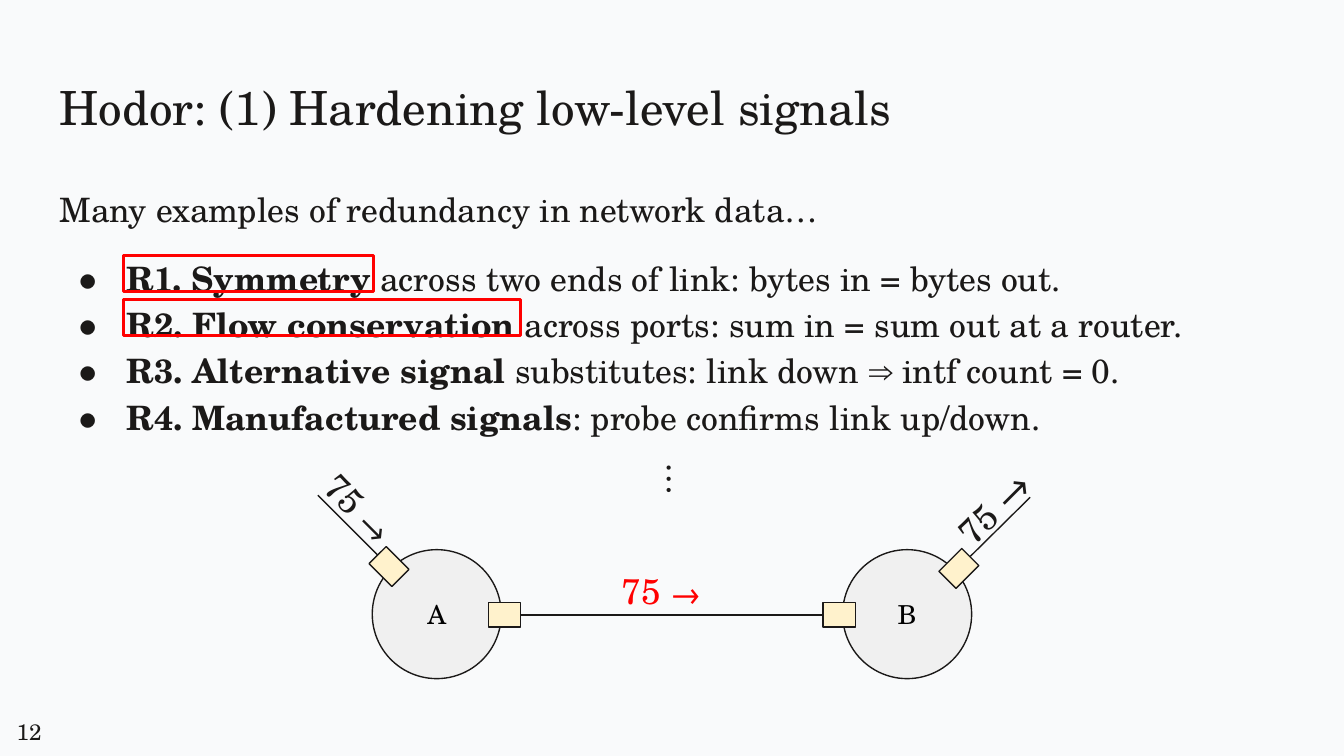
from dataclasses import dataclass

import pptx
import pptx.dml.color
import pptx.enum.shapes
import pptx.enum.text
import pptx.oxml.ns
import pptx.util
from lxml import etree

SCALE = 4572
Kind = pptx.enum.shapes.MSO_SHAPE
Align = pptx.enum.text.PP_ALIGN
Anchor = pptx.enum.text.MSO_ANCHOR


@dataclass(frozen=True)
class Theme:
    font: str = "TeX Gyre Schola"
    back: str = "F9FAFB"
    ink: str = "1B1918"
    black: str = "000000"
    red: str = "FF0000"
    node: str = "F0F0F0"
    port: str = "FFF2CC"
    title: float = 25.2
    body: float = 18
    flow: float = 19
    arrow: float = 16
    name: float = 14
    page: float = 12
    thin: float = 0.75
    thick: float = 1.5


@dataclass(frozen=True)
class Box:
    left: int
    top: int
    wide: int
    high: int
    turn: int = 0


@dataclass(frozen=True)
class Bit:
    text: str
    size: float
    color: str
    bold: bool = False


@dataclass(frozen=True)
class Label:
    box: Box
    bits: tuple[Bit, ...]
    align: Align = Align.LEFT
    space: float = 1.0


@dataclass(frozen=True)
class Point:
    lead: str
    rest: str


@dataclass(frozen=True)
class Node:
    name: str
    box: Box


@dataclass(frozen=True)
class Link:
    left: int
    top: int
    right: int
    low: int


THEME = Theme()

POINTS = (
    Point("R1. Symmetry", " across two ends of link: bytes in = bytes out."),
    Point("R2. Flow conservation", " across ports: sum in = sum out at a router."),
    Point("R3. Alternative signal", " substitutes: link down ⇒ intf count = 0."),
    Point("R4. Manufactured signals", ": probe confirms link up/down."),
)
NODES = (Node("A", Box(554, 818, 192, 192)), Node("B", Box(1254, 818, 192, 192)))
PORTS = (
    Box(727, 897, 48, 36),
    Box(1225, 897, 48, 36),
    Box(555, 825, 48, 36, 225),
    Box(1403, 828, 48, 36, 315),
)
LINKS = (
    Link(775, 915, 1225, 915),
    Link(473, 737, 562, 826),
    Link(1533, 740, 1444, 828),
)
FRAMES = (Box(184, 380, 372, 54), Box(184, 446, 591, 54))
LABELS = (
    Label(Box(69, 97, 1864, 126),
          (Bit("Hodor: (1) Hardening low-level signals", THEME.title, THEME.ink),)),
    Label(Box(920, 651, 160, 126, 90),
          (Bit("…", THEME.body, THEME.ink),), Align.CENTER),
    Label(Box(888, 818, 192, 104),
          (Bit("75 ", THEME.flow, THEME.red), Bit("→", THEME.arrow, THEME.red)),
          Align.CENTER, 1.15),
    Label(Box(360, 654, 278, 104, 45),
          (Bit("75 ", THEME.flow, THEME.ink), Bit("→", THEME.arrow, THEME.ink)),
          Align.RIGHT, 1.15),
    Label(Box(1369, 648, 304, 104, 315),
          (Bit("75 →", THEME.flow, THEME.ink),), Align.LEFT, 1.15),
    Label(Box(5, 1049, 102, 70), (Bit("12", THEME.page, THEME.ink),)),
)


def px(size: int) -> int:
    return size * SCALE


def rgb(color: str) -> pptx.dml.color.RGBColor:
    return pptx.dml.color.RGBColor.from_string(color)


def sub(root, tag: str, **attrs: str):
    return etree.SubElement(root, pptx.oxml.ns.qn(tag), attrs)


def place(box: Box) -> tuple[int, ...]:
    return px(box.left), px(box.top), px(box.wide), px(box.high)


def write(para, bits: tuple[Bit, ...]) -> None:
    para.text = bits[0].text
    for bit in bits[1:]:
        para.add_run().text = bit.text
    for run, bit in zip(para.runs, bits):
        font = run.font
        font.name = THEME.font
        font.size = pptx.util.Pt(bit.size)
        font.bold = bit.bold
        font.color.rgb = rgb(bit.color)
        for tag in ("a:ea", "a:cs"):
            sub(run._r.get_or_add_rPr(), tag, typeface=THEME.font)


def pad(frame) -> None:
    frame.word_wrap = True
    frame.margin_left = frame.margin_right = px(20)
    frame.margin_top = frame.margin_bottom = px(20)


def add_text(slide, box: Box):
    shape = slide.shapes.add_textbox(*place(box))
    shape.rotation = box.turn
    pad(shape.text_frame)
    return shape.text_frame


def add_label(slide, label: Label) -> None:
    para = add_text(slide, label.box).paragraphs[0]
    write(para, label.bits)
    para.alignment = label.align
    para.line_spacing = label.space


def add_list(slide, box: Box, intro: str, points: tuple[Point, ...]) -> None:
    frame = add_text(slide, box)
    frame.text = "\n".join([intro] + [point.lead for point in points])
    first, *rest = frame.paragraphs
    first.line_spacing = 1.15
    write(first, (Bit(intro, THEME.body, THEME.ink),))
    for para, point in zip(rest, points):
        write(para, (Bit(point.lead, THEME.body, THEME.ink, True),
                     Bit(point.rest, THEME.body, THEME.ink)))
        para.line_spacing = 1.15
        para.space_before = pptx.util.Pt(12 if para is rest[0] else 0)
        props = para._p.get_or_add_pPr()
        props.set("marL", str(px(100)))
        props.set("indent", str(px(-76)))
        sub(sub(props, "a:buClr"), "a:srgbClr", val=THEME.ink)
        sub(props, "a:buFont", typeface=THEME.font)
        sub(props, "a:buChar", char="●")


def add_shape(slide, kind: Kind, box: Box, fill: str | None, color: str, width: float):
    shape = slide.shapes.add_shape(kind, *place(box))
    shape.rotation = box.turn
    shape.shadow.inherit = False
    if fill:
        shape.fill.solid()
        shape.fill.fore_color.rgb = rgb(fill)
    else:
        shape.fill.background()
    shape.line.color.rgb = rgb(color)
    shape.line.width = pptx.util.Pt(width)
    return shape


def add_node(slide, node: Node) -> None:
    shape = add_shape(slide, Kind.OVAL, node.box, THEME.node, THEME.ink, THEME.thin)
    frame = shape.text_frame
    pad(frame)
    frame.vertical_anchor = Anchor.MIDDLE
    write(frame.paragraphs[0], (Bit(node.name, THEME.name, THEME.black),))
    frame.paragraphs[0].alignment = Align.CENTER


def add_link(slide, link: Link) -> None:
    line = slide.shapes.add_connector(
        pptx.enum.shapes.MSO_CONNECTOR.STRAIGHT,
        px(link.left), px(link.top), px(link.right), px(link.low))
    line.line.color.rgb = rgb(THEME.ink)
    line.line.width = pptx.util.Pt(THEME.thin)
    sub(line._element.spPr, "a:effectLst")


def main() -> None:
    deck = pptx.Presentation()
    deck.slide_width, deck.slide_height = px(2000), px(1125)
    slide = deck.slides.add_slide(deck.slide_layouts[6])
    slide.background.fill.solid()
    slide.background.fill.fore_color.rgb = rgb(THEME.back)
    add_list(slide, Box(69, 252, 1864, 748),
             "Many examples of redundancy in network data…", POINTS)
    for node in NODES:
        add_node(slide, node)
    for link in LINKS:
        add_link(slide, link)
    for port in PORTS:
        add_shape(slide, Kind.RECTANGLE, port, THEME.port, THEME.ink, THEME.thin)
    for label in LABELS:
        add_label(slide, label)
    for frame in FRAMES:
        add_shape(slide, Kind.RECTANGLE, frame, None, THEME.red, THEME.thick)
    deck.save("out.pptx")


if __name__ == "__main__":
    main()
